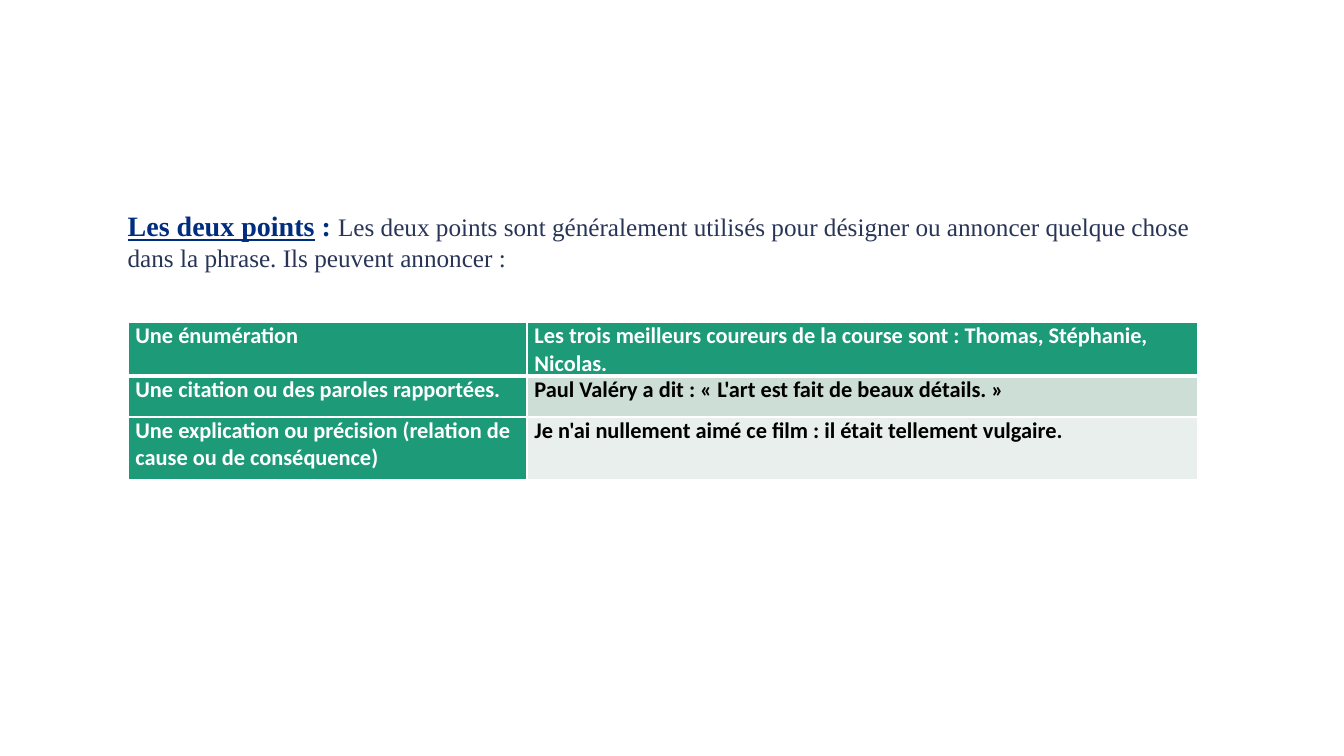
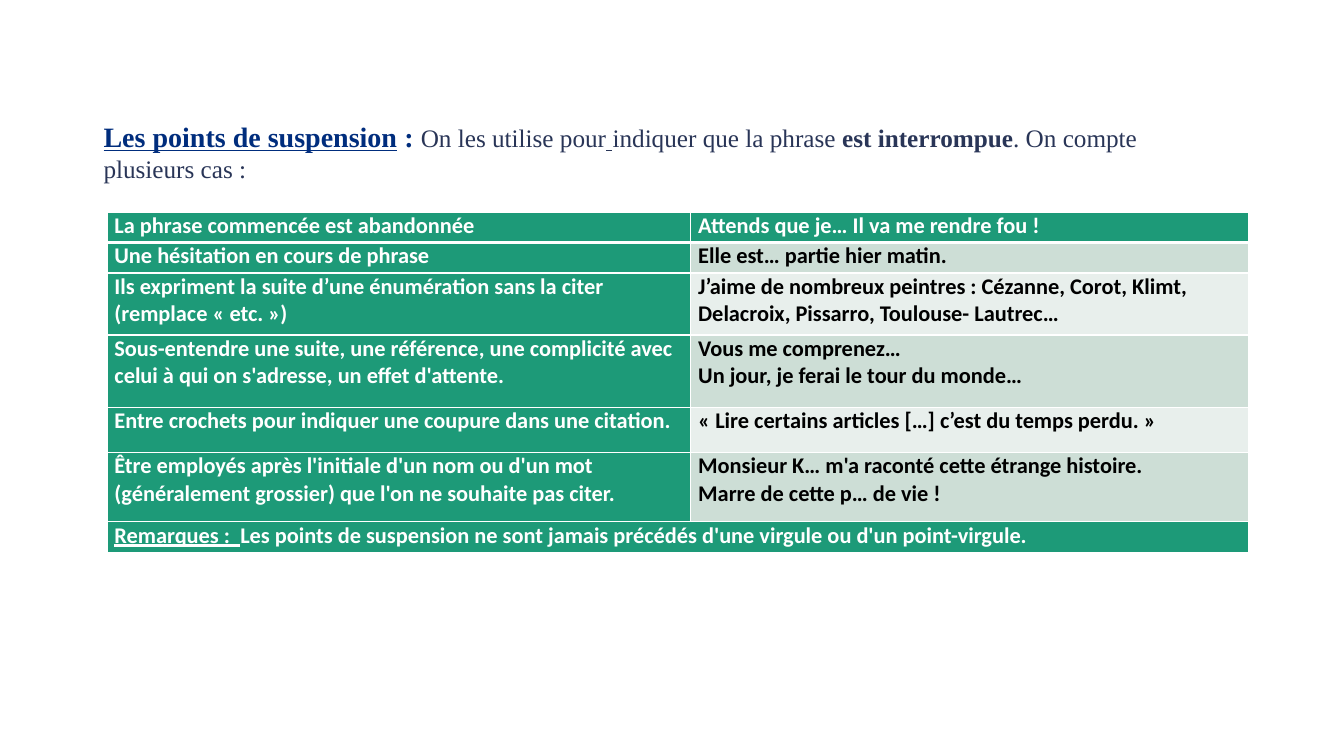
"""Build two slides on French punctuation, each a heading with a table."""
from lxml import etree
from pptx import Presentation
from pptx.dml.color import RGBColor
from pptx.enum.text import MSO_ANCHOR, MSO_AUTO_SIZE, PP_ALIGN
from pptx.oxml.ns import qn
from pptx.util import Pt

TOP, LEFT = MSO_ANCHOR.TOP, PP_ALIGN.LEFT
GROW = MSO_AUTO_SIZE.SHAPE_TO_FIT_TEXT
PX = 9525
WIDE, HIGH = 1280, 720
TITLE_ONLY = 5
PAD = 7
RULE, THICK = 1, 3

HUES = {
    "navy": "002D7D", "slate": "293557", "green": "1D9A78",
    "mint": "CDDED6", "pale": "E8EFEC", "white": "FFFFFF", "black": "000000",
}
TERM = {"font": "Times New Roman", "size": 20, "hue": "navy", "bold": True}
BODY = {"font": "Times New Roman", "size": 18, "hue": "slate"}
CELL = {"font": "Calibri", "size": 16, "bold": True}

SLIDES = [
    {
        "head": [
            ("Les deux points", {**TERM, "line": True}),
            (" : ", TERM),
            ("Les deux points sont généralement utilisés pour désigner ou annoncer "
             "quelque chose dans la phrase. Ils peuvent annoncer :", BODY),
        ],
        "box": (112, 194, 1056, 71),
        "spot": (122, 307),
        "cols": (380, 639),
        "rows": [
            (39, "Une énumération",
             "Les trois meilleurs coureurs de la course sont : Thomas, Stéphanie, Nicolas."),
            (39, "Une citation ou des paroles rapportées.",
             "Paul Valéry a dit : « L'art est fait de beaux détails. »"),
            (60, "Une explication ou précision (relation de cause ou de conséquence)",
             "Je n'ai nullement aimé ce film : il était tellement vulgaire."),
        ],
        "note": None,
    },
    {
        "head": [
            ("Les points de suspension", {**TERM, "line": True}),
            (" : ", TERM),
            ("On les utilise pour", BODY),
            (" ", {**BODY, "line": True}),
            ("indiquer que la phrase ", BODY),
            ("est interrompue", {**BODY, "bold": True}),
            (". On compte plusieurs cas :", BODY),
        ],
        "box": (89, 109, 1033, 71),
        "spot": (102, 202),
        "cols": (556, 531),
        "rows": [
            (29, "La phrase commencée est abandonnée",
             "Attends que je… Il va me rendre fou !"),
            (29, "Une hésitation en cours de phrase",
             "Elle est… partie hier matin."),
            (59, "Ils expriment la suite d’une énumération sans la citer (remplace « etc. »)",
             "J’aime de nombreux peintres : Cézanne, Corot, Klimt, Delacroix, "
             "Pissarro, Toulouse- Lautrec…"),
            (69, "Sous-entendre une suite, une référence, une complicité avec celui "
             "à qui on s'adresse, un effet d'attente.",
             "Vous me comprenez…\nUn jour, je ferai le tour du monde…"),
            (43, "Entre crochets pour indiquer une coupure dans une citation.",
             "« Lire certains articles […] c’est du temps perdu. »"),
            (66, "Être employés après l'initiale d'un nom ou d'un mot (généralement "
             "grossier) que l'on ne souhaite pas citer.",
             "Monsieur K… m'a raconté cette étrange histoire.\nMarre de cette p… de vie !"),
        ],
        "note": (29, "Remarques :  ",
                 "Les points de suspension ne sont jamais précédés d'une virgule "
                 "ou d'un point-virgule."),
    },
]


def tint(name):
    return RGBColor.from_string(HUES[name])


def put(para, text, font, size, hue, bold=False, line=False):
    run = para.add_run()
    run.text = text
    face = run.font
    face.name, face.size = font, Pt(size)
    face.bold, face.underline = bold, line
    face.color.rgb = tint(hue)


def edge(cell, side, width):
    props = cell._tc.get_or_add_tcPr()
    line = etree.SubElement(props, qn("a:ln" + side), w=str(Pt(width)))
    fill = etree.SubElement(line, qn("a:solidFill"))
    etree.SubElement(fill, qn("a:srgbClr"), val=HUES["white"])


def dress(cell, row, fill):
    cell.margin_left = cell.margin_right = PAD * PX
    cell.margin_top = cell.margin_bottom = 0
    cell.vertical_anchor = TOP
    widths = {"L": RULE, "R": RULE,
              "T": THICK if row == 1 else RULE,
              "B": THICK if row == 0 else RULE}
    for side, width in widths.items():
        edge(cell, side, width)
    cell.fill.solid()
    cell.fill.fore_color.rgb = tint(fill)


def look(row, col):
    if row == 0 or col == 0:
        return "green", "white"
    return ("mint" if row % 2 else "pale"), "black"


def add_head(slide, runs, box):
    title = slide.shapes.title
    title.left, title.top, title.width, title.height = (n * PX for n in box)
    frame = title.text_frame
    frame.word_wrap, frame.auto_size = True, GROW
    frame.vertical_anchor = TOP
    para = frame.paragraphs[0]
    para.alignment = LEFT
    for text, style in runs:
        put(para, text, **style)


def add_grid(slide, spot, cols, rows, note):
    highs = [row[0] for row in rows] + ([note[0]] if note else [])
    left, top, wide, high = (n * PX for n in (*spot, sum(cols), sum(highs)))
    grid = slide.shapes.add_table(len(highs), len(cols), left, top, wide, high).table
    grid.horz_banding = False
    for col, width in zip(grid.columns, cols):
        col.width = width * PX
    for row, height in zip(grid.rows, highs):
        row.height = height * PX
    for r, (_, *texts) in enumerate(rows):
        for c, text in enumerate(texts):
            cell = grid.cell(r, c)
            fill, hue = look(r, c)
            dress(cell, r, fill)
            frame = cell.text_frame
            for i, part in enumerate(text.split("\n")):
                para = frame.add_paragraph() if i else frame.paragraphs[0]
                put(para, part, hue=hue, **CELL)
    if note:
        last = len(rows)
        cell = grid.cell(last, 0)
        cell.merge(grid.cell(last, len(cols) - 1))
        dress(cell, last, "green")
        para = cell.text_frame.paragraphs[0]
        put(para, note[1], hue="white", line=True, **CELL)
        put(para, note[2], hue="white", **CELL)


def main():
    deck = Presentation()
    deck.slide_width, deck.slide_height = WIDE * PX, HIGH * PX
    for data in SLIDES:
        slide = deck.slides.add_slide(deck.slide_layouts[TITLE_ONLY])
        add_head(slide, data["head"], data["box"])
        add_grid(slide, data["spot"], data["cols"], data["rows"], data["note"])
    deck.save("out.pptx")


if __name__ == "__main__":
    main()
